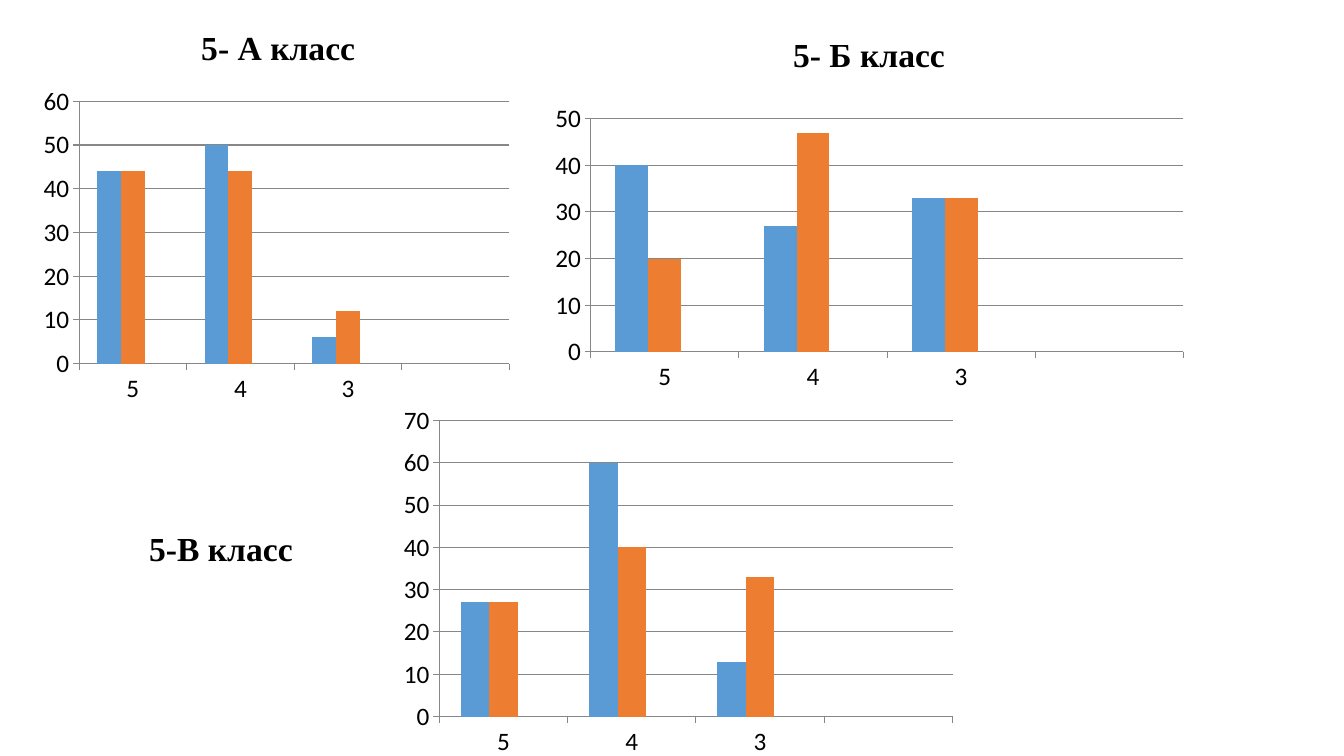
from lxml import etree
from pptx import Presentation
from pptx.chart.data import CategoryChartData
from pptx.dml.color import RGBColor
from pptx.enum import chart as chart_enum, text as text_enum
from pptx.oxml import ns
from pptx.util import Pt

COLOURS = {"text": "000000", "line": "878787",
           "blue": "5B9BD5", "orange": "ED7D31", "grey": "A5A5A5"}
SERIES_COLOURS = ("blue", "orange", "grey")
GRADES = ("5", "4", "3", "")
NO_VALUES = (None,) * len(GRADES)
TITLE_FONT = {"name": "Times New Roman", "size": Pt(24), "bold": True}
CHART_FONT = {"name": "Calibri", "size": Pt(18), "bold": False}

# Boxes are left, top, width, height; margins are left, top, right, bottom.
CLASSES = (
    {"title": "5- А класс", "title_box": (0, 0, 397.4, 70.6), "centred": True,
     "chart_box": (24.5, 56.9, 346.3, 236.9), "margins": (32, 15.5, 7, 34),
     "maximum": 60, "values": ((44, 50, 6, None), (44, 44, 12, None), NO_VALUES)},
    {"title": "5- Б класс", "title_box": (559.4, 20.9, 123.8, 36), "centred": False,
     "chart_box": (388, 69.8, 467.3, 214.6), "margins": (34, 15, 10, 33),
     "maximum": 50, "values": ((40, 27, 33, None), (20, 47, 33, None), NO_VALUES)},
    {"title": "5-В класс", "title_box": (99.4, 373.7, 118, 36), "centred": False,
     "chart_box": (288, 284.4, 402.5, 256.3), "margins": (25.8, 16, 10, 28),
     "maximum": 70, "values": ((27, 60, 13, None), (27, 40, 33, None), NO_VALUES)},
)


def colour(name):
    return RGBColor.from_string(COLOURS[name])


def apply_format(target, values):
    for name, value in values.items():
        setattr(target, name, value)


def format_font(font, values):
    apply_format(font, values)
    font.color.rgb = colour("text")


def add_title(slide, box, title, centred):
    shape = slide.shapes.add_textbox(*map(Pt, box))
    frame = shape.text_frame
    apply_format(frame, {
        "word_wrap": centred,
        "vertical_anchor": text_enum.MSO_ANCHOR.MIDDLE if centred
        else text_enum.MSO_ANCHOR.TOP,
        "auto_size": text_enum.MSO_AUTO_SIZE.NONE if centred
        else text_enum.MSO_AUTO_SIZE.SHAPE_TO_FIT_TEXT})
    paragraph = frame.paragraphs[0]
    if centred:
        apply_format(paragraph, {"alignment": text_enum.PP_ALIGN.CENTER,
                                 "line_spacing": 0.9})
    run = paragraph.add_run()
    run.text = title
    format_font(run.font, TITLE_FONT)


def set_plot_margins(chart, box, margins):
    """Fix the inner plot area, given its margins within the chart box."""
    width, height = box[2:]
    left, top, right, bottom = margins
    plot_area = chart.element.find(".//" + ns.qn("c:plotArea"))
    for old in plot_area.findall(ns.qn("c:layout")):
        plot_area.remove(old)
    layout = etree.Element(ns.qn("c:layout"))
    manual = etree.SubElement(layout, ns.qn("c:manualLayout"))
    settings = {"layoutTarget": "inner", "xMode": "edge", "yMode": "edge",
                "x": left / width, "y": top / height,
                "w": (width - left - right) / width,
                "h": (height - top - bottom) / height}
    for name, value in settings.items():
        etree.SubElement(manual, ns.qn("c:" + name)).set("val", str(value))
    plot_area.insert(0, layout)


def add_grade_chart(slide, box, margins, maximum, values):
    data = CategoryChartData()
    data.categories = GRADES
    for number, series_values in enumerate(values, 1):
        data.add_series(f"Series {number}", series_values)
    chart = slide.shapes.add_chart(
        chart_enum.XL_CHART_TYPE.COLUMN_CLUSTERED, *map(Pt, box), data).chart
    apply_format(chart, {"has_legend": False, "has_title": False})
    format_font(chart.font, CHART_FONT)

    plot = chart.plots[0]
    apply_format(plot, {"gap_width": 150, "overlap": 0, "vary_by_categories": False})
    for series, name in zip(plot.series, SERIES_COLOURS):
        series.format.fill.solid()
        series.format.fill.fore_color.rgb = colour(name)

    chart.category_axis.has_major_gridlines = False
    apply_format(chart.value_axis, {
        "has_major_gridlines": True, "minimum_scale": 0,
        "maximum_scale": maximum, "major_unit": 10})
    for axis in (chart.category_axis, chart.value_axis):
        apply_format(axis, {"major_tick_mark": chart_enum.XL_TICK_MARK.OUTSIDE,
                            "minor_tick_mark": chart_enum.XL_TICK_MARK.NONE})
    for lined in (chart.category_axis, chart.value_axis,
                  chart.value_axis.major_gridlines):
        lined.format.line.width = Pt(0.75)
        lined.format.line.color.rgb = colour("line")
    set_plot_margins(chart, box, margins)


def main():
    presentation = Presentation()
    apply_format(presentation, {"slide_width": Pt(960), "slide_height": Pt(540)})
    slide = presentation.slides.add_slide(presentation.slide_layouts[6])
    for group in CLASSES:
        add_title(slide, group["title_box"], group["title"], group["centred"])
        add_grade_chart(slide, group["chart_box"], group["margins"],
                        group["maximum"], group["values"])
    presentation.save("out.pptx")


if __name__ == "__main__":
    main()
